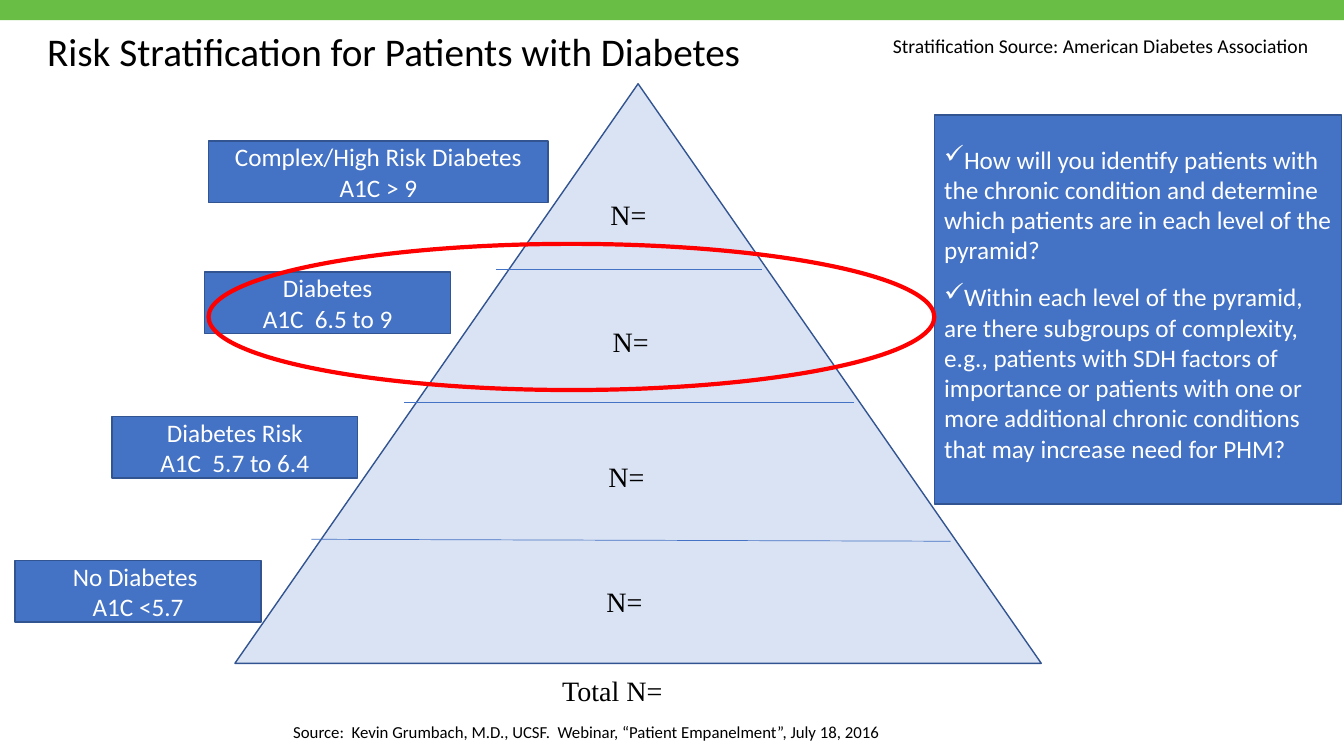
from lxml import etree
from pptx import Presentation
from pptx.dml.color import RGBColor
from pptx.enum.shapes import MSO_CONNECTOR, MSO_SHAPE
from pptx.enum.text import MSO_ANCHOR, PP_ALIGN
from pptx.oxml.ns import qn
from pptx.util import Pt

LEFT, CENTER = PP_ALIGN.LEFT, PP_ALIGN.CENTER
TOP, MIDDLE = MSO_ANCHOR.TOP, MSO_ANCHOR.MIDDLE
RECTANGLE, TRIANGLE, OVAL = MSO_SHAPE.RECTANGLE, MSO_SHAPE.ISOSCELES_TRIANGLE, MSO_SHAPE.OVAL
SANS, SERIF = "Calibri", "Times New Roman"
COLORS = {"band": "69BE46", "pyramid": "DAE3F3", "edge": "325491", "box": "4472C4",
          "ring": "FF0000", "black": "000000", "white": "FFFFFF"}

# Content: text, left, top, width, height, size, wrap
CAPTIONS = [
    ("Risk Stratification for Patients with Diabetes", 26.6, 15.8, 595.4, 41, 28, True),
    ("Stratification Source: American Diabetes Association", 630.7, 20.9, 314.6, 24.5, 14, False),
    ("Source:  Kevin Grumbach, M.D., UCSF.  Webinar, “Patient Empanelment”, July 18, 2016",
     202.3, 511.9, 437.8, 21.6, 12, False),
]
# Risk levels: text lines, left, top, width
LEVELS = [
    (["Complex/High Risk Diabetes", "A1C > 9"], 149, 100.8, 242.6),
    (["Diabetes", "A1C  6.5 to 9"], 146.2, 194.4, 175.7),
    (["Diabetes Risk", "A1C  5.7 to 6.4"], 79.9, 297.4, 175.7),
    (["No Diabetes ", "A1C <5.7"], 10.8, 400.3, 175.7),
]
LEVEL_HEIGHT = 43.9
# Patient counts: text, centre, top
COUNTS = [("N=", 448.9, 137.5), ("N=", 450.4, 228.2), ("N=", 447.5, 324.7),
          ("N=", 446, 414), ("Total N=", 437.4, 477.4)]
COUNT_WIDTH, COUNT_HEIGHT = 110, 31.7
# Pyramid dividers: start x, start y, end x, end y
DIVIDERS = [(354.2, 192.2, 544.3, 192.2), (288.7, 287.3, 609.8, 287.3),
            (222.5, 385.2, 679, 386.6)]
QUESTIONS = [
    "How will you identify patients with the chronic condition and determine which "
    "patients are in each level of the pyramid?",
    "Within each level of the pyramid, are there subgroups of complexity, e.g., patients "
    "with SDH factors of importance or patients with one or more additional chronic "
    "conditions that may increase need for PHM?",
]

deck = Presentation()
deck.slide_width, deck.slide_height = Pt(960), Pt(540)
page = deck.slides.add_slide(deck.slide_layouts[6])


def color(name):
    return RGBColor.from_string(COLORS[name])


def add_figure(kind, left, top, width, height, fill=None, line=None, weight=1):
    figure = page.shapes.add_shape(kind, Pt(left), Pt(top), Pt(width), Pt(height))
    figure.shadow.inherit = False
    if fill:
        figure.fill.solid()
        figure.fill.fore_color.rgb = color(fill)
    else:
        figure.fill.background()
    if line:
        figure.line.color.rgb = color(line)
        figure.line.width = Pt(weight)
    else:
        figure.line.fill.background()
    return figure


def write(box, lines, size, ink="black", font=SANS, align=LEFT, anchor=TOP,
          wrap=True, bullet=None, after=0):
    frame = box.text_frame
    frame.word_wrap = wrap
    frame.vertical_anchor = anchor
    frame.text = "\n".join(lines)
    for para in frame.paragraphs:
        para.alignment = align
        para.space_after = Pt(after)
        if bullet:
            properties = para._p.get_or_add_pPr()
            properties.set("marL", "0")
            properties.set("indent", "0")
            etree.SubElement(properties, qn("a:buChar")).set("char", bullet)
        for span in para.runs:
            span.font.name = font
            span.font.size = Pt(size)
            span.font.color.rgb = color(ink)


def add_text(left, top, width, height, lines, size, **style):
    box = page.shapes.add_textbox(Pt(left), Pt(top), Pt(width), Pt(height))
    write(box, lines, size, **style)


# Top band and pyramid
add_figure(RECTANGLE, 0, 0, 960, 14.4, "band")
add_figure(TRIANGLE, 167.8, 59.8, 576, 414, "pyramid", "edge")
for x1, y1, x2, y2 in DIVIDERS:
    divider = page.shapes.add_connector(MSO_CONNECTOR.STRAIGHT, Pt(x1), Pt(y1), Pt(x2), Pt(y2))
    divider.line.color.rgb = color("box")
    divider.line.width = Pt(0.5)
    etree.SubElement(divider._element.spPr, qn("a:effectLst"))

# Title and sources
for text, left, top, width, height, size, wrap in CAPTIONS:
    add_text(left, top, width, height, [text], size, wrap=wrap)

# Risk level labels
for lines, left, top, width in LEVELS:
    label = add_figure(RECTANGLE, left, top, width, LEVEL_HEIGHT, "box", "edge")
    write(label, lines, 18, ink="white", align=CENTER, anchor=MIDDLE)

# Patient counts
for text, center, top in COUNTS:
    add_text(center - COUNT_WIDTH / 2, top, COUNT_WIDTH, COUNT_HEIGHT, [text], 20,
             font=SERIF, align=CENTER)

# Question panel
panel = add_figure(RECTANGLE, 667.4, 82.1, 290.9, 277.9, "box", "edge")
panel.text_frame.margin_top = Pt(20.7)
write(panel, QUESTIONS, 18, ink="white", bullet="✓", after=12)

# Highlight ring
add_figure(OVAL, 149, 174.2, 518.4, 104.4, line="ring", weight=3)

deck.save("out.pptx")
